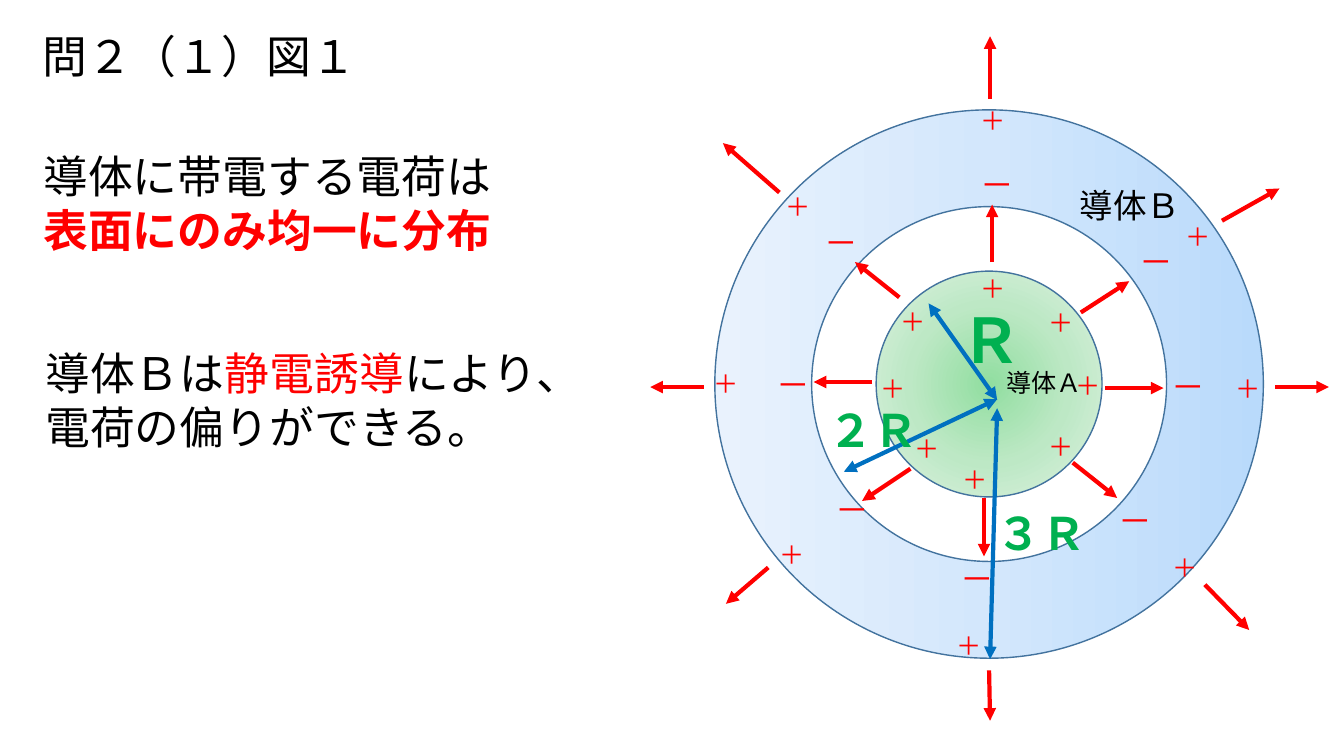
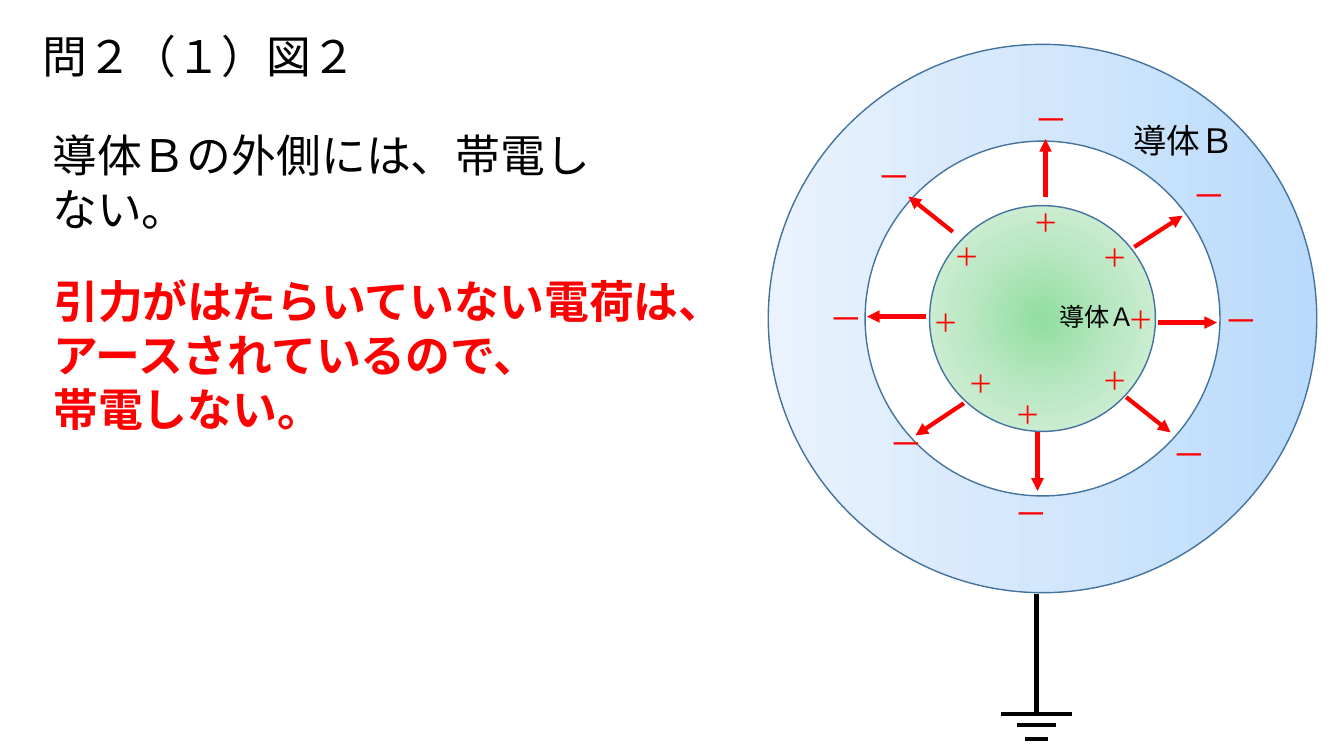
from lxml import etree
from pptx import Presentation
from pptx.dml.color import RGBColor
from pptx.enum.shapes import MSO_CONNECTOR, MSO_SHAPE
from pptx.enum.text import MSO_ANCHOR
from pptx.oxml.ns import qn
from pptx.util import Inches, Pt

STRAIGHT, OVAL, MIDDLE = MSO_CONNECTOR.STRAIGHT, MSO_SHAPE.OVAL, MSO_ANCHOR.MIDDLE
FONT = "Noto Sans CJK JP"
COLORS = {"ink": "000000", "red": "FF0000", "blue": "0070C0", "green": "00B050",
          "outline": "43739E", "white": "FFFFFF"}
SHELL_STOPS = ["B9DAFB", "D3E7FC", "E9F2FD"]
CORE_STOPS = ["91DEA0", "BDE8C5", "DFF3E3"]

# Text: box, wrap, paragraphs of (text, colour, bold) runs
SLIDES = [
    {"title": "問２（１）図１", "center": (9.81, 3.81), "induced": True,
     "texts": [
         ((0.33, 1.43, 4.71, 1.18), False,
          [[("導体に帯電する電荷は", "ink", False)],
           [("表面にのみ均一に分布", "red", True)]]),
         ((0.35, 3.38, 5.91, 1.18), True,
          [[("導体Ｂは", "ink", False), ("静電誘導", "red", False),
            ("により、電荷の偏りができる。", "ink", False)]])]},
    {"title": "問２（１）図２", "center": (10.34, 3.16), "induced": False,
     "texts": [
         ((0.42, 1.22, 5.91, 1.18), True,
          [[("導体Ｂの外側には、帯電しない。", "ink", False)]]),
         ((0.43, 2.67, 6.57, 1.72), True,
          [[("引力がはたらいていない電荷は、アースされているので、", "red", True)],
           [("帯電しない。", "red", True)]])]},
]

# Diagram parts, as offsets from the common centre of the circles
CIRCLES = [(2.72, SHELL_STOPS, False), (1.76, None, False), (1.12, CORE_STOPS, True)]
CORE_PLUS = [(-0.75, -0.62), (-0.95, 0.04), (-0.61, 0.64), (-0.14, 0.95),
             (0.72, 0.62), (0.98, 0.01), (0.72, -0.61), (0.04, -0.95)]
INNER_MINUS = [(0.09, -1.98), (-1.46, -1.41), (-1.94, 0), (-1.35, 1.24),
               (-0.11, 1.93), (1.46, 1.35), (1.66, -1.22), (1.98, 0.02)]
OUTER_PLUS = [(-0.2, 2.59), (2.07, -1.46), (2.57, 0.04), (1.95, 1.82),
              (-1.95, 1.69), (-2.61, 0), (-1.89, -1.76), (0.04, -2.61)]
INNER_FIELD = [(0.91, -0.71, 1.39, -1.02), (0.03, -1.21, 0.03, -1.78),
               (1.15, 0.04, 1.73, 0.04), (0.83, 0.78, 1.27, 1.13),
               (-0.78, 0.84, -1.26, 1.16), (-0.05, 1.13, -0.05, 1.71),
               (-1.16, -0.02, -1.74, -0.02), (-0.89, -0.86, -1.33, -1.21)]
OUTER_FIELD = [(0.01, -2.83, 0.01, -3.45), (2.31, -1.62, 2.88, -1.94),
               (2.84, 0.03, 3.37, 0.03), (2.14, 1.99, 2.58, 2.44),
               (-2.83, 0.03, -3.36, 0.03), (-2.08, -1.9, -2.64, -2.39),
               (-2.19, 1.82, -2.61, 2.18), (0, 2.84, 0.01, 3.34)]
# Radius arrow, label, label size, label box
RADII = [((0.08, 0.16, -0.6, -0.8), "Ｒ", 44, (-0.38, -0.86, 0.92, 0.84)),
         ((0.08, 0.15, -1.44, 0.87), "２Ｒ", 32, (-1.69, 0.14, 1.15, 0.64)),
         ((0.08, 0.24, 0.01, 2.73), "３Ｒ", 32, (-0.02, 1.16, 1.44, 0.64))]
NAMES = [("導体Ｂ", 24, (0.8, -2.02, 1.21, 0.5)), ("導体Ａ", 18, (0.07, -0.22, 0.96, 0.4))]
EARTH_X, EARTH_TOP = -0.06, 2.73
EARTH_BARS = [(3.92, 0.35), (4.03, 0.19), (4.17, 0.11)]  # height, half width


def rgb(name):
    return RGBColor.from_string(COLORS[name])


def add_text(s, box, paragraphs, size=32, wrap=True):
    tb = s.shapes.add_textbox(*(Inches(v) for v in box))
    tf = tb.text_frame
    tf.word_wrap = wrap
    for i, runs in enumerate(paragraphs):
        p = tf.paragraphs[0] if i == 0 else tf.add_paragraph()
        for text, color, bold in runs:
            r = p.add_run()
            r.text = text
            r.font.size, r.font.bold, r.font.name = Pt(size), bold, FONT
            r.font.color.rgb = rgb(color)
            etree.SubElement(r.font._element, qn("a:ea"), typeface=FONT)
    return tf


def add_line(s, ends, color, arrows=()):
    c = s.shapes.add_connector(STRAIGHT, *(Inches(v) for v in ends))
    c.line.width = Pt(3)
    c.line.color.rgb = rgb(color)
    ln = c.line._get_or_add_ln()
    for end in arrows:
        etree.SubElement(ln, qn(f"a:{end}"), type="triangle")
    etree.SubElement(c._element.spPr, qn("a:effectLst"))


def set_gradient(shape, stops, radial):
    """Replace the fill with evenly spaced stops, radial or right to left."""
    shape.fill.background()
    spPr = shape._element.spPr
    grad = etree.Element(qn("a:gradFill"), rotWithShape="1")
    spPr.replace(spPr.find(qn("a:noFill")), grad)
    gs_list = etree.SubElement(grad, qn("a:gsLst"))
    for i, color in enumerate(stops):
        gs = etree.SubElement(gs_list, qn("a:gs"), pos=str(100000 * i // (len(stops) - 1)))
        etree.SubElement(gs, qn("a:srgbClr"), val=color)
    if radial:
        focus = etree.SubElement(grad, qn("a:path"), path="circle")
        etree.SubElement(focus, qn("a:fillToRect"), {side: "50000" for side in "ltrb"})
    else:
        etree.SubElement(grad, qn("a:lin"), ang="10800000", scaled="0")


def add_circle(s, cx, cy, radius, stops, radial):
    box = (cx - radius, cy - radius, 2 * radius, 2 * radius)
    shape = s.shapes.add_shape(OVAL, *(Inches(v) for v in box))
    shape.shadow.inherit = False
    shape.line.color.rgb = rgb("outline")
    shape.line.width = Pt(1)
    if stops:
        set_gradient(shape, stops, radial)
    else:
        shape.fill.solid()
        shape.fill.fore_color.rgb = rgb("white")


def add_diagram(s, cx, cy, induced):
    def shift_line(ends):
        x1, y1, x2, y2 = ends
        return cx + x1, cy + y1, cx + x2, cy + y2

    def shift_box(box):
        x, y, w, h = box
        return cx + x, cy + y, w, h

    def add_charges(sign, size, width, height, points):
        for x, y in points:
            box = shift_box((x - width / 2, y - height / 2, width, height))
            add_text(s, box, [[(sign, "red", False)]], size, False)

    for circle in CIRCLES:
        add_circle(s, cx, cy, *circle)
    if induced:
        for ends, label, size, box in RADII:
            add_line(s, shift_line(ends), "blue", ("headEnd", "tailEnd"))
            add_text(s, shift_box(box), [[(label, "green", True)]], size)

    # Charges and conductor names
    add_charges("＋", 18, 0.45, 0.4, CORE_PLUS + (OUTER_PLUS if induced else []))
    for name, size, box in NAMES:
        add_text(s, shift_box(box), [[(name, "ink", False)]], size, False)
    add_charges("－", 24, 0.54, 0.5, INNER_MINUS)

    # Field arrows
    for ends in INNER_FIELD + (OUTER_FIELD if induced else []):
        add_line(s, shift_line(ends), "red", ("tailEnd",))

    # Earth symbol on the grounded shell
    if not induced:
        stem = (EARTH_X, EARTH_TOP, EARTH_X, EARTH_BARS[0][0])
        bars = [(EARTH_X - half, y, EARTH_X + half, y) for y, half in EARTH_BARS]
        for ends in [stem] + bars:
            add_line(s, shift_line(ends), "ink")


def main():
    prs = Presentation()
    prs.slide_width, prs.slide_height = Inches(13.33), Inches(7.5)
    for content in SLIDES:
        s = prs.slides.add_slide(prs.slide_layouts[6])
        tf = add_text(s, (0.32, 0.21, 4.79, 0.75), [[(content["title"], "ink", False)]])
        tf.vertical_anchor = MIDDLE
        tf.paragraphs[0].line_spacing = 0.9
        for box, wrap, paragraphs in content["texts"]:
            add_text(s, box, paragraphs, wrap=wrap)
        add_diagram(s, *content["center"], content["induced"])
    prs.save("out.pptx")


if __name__ == "__main__":
    main()
